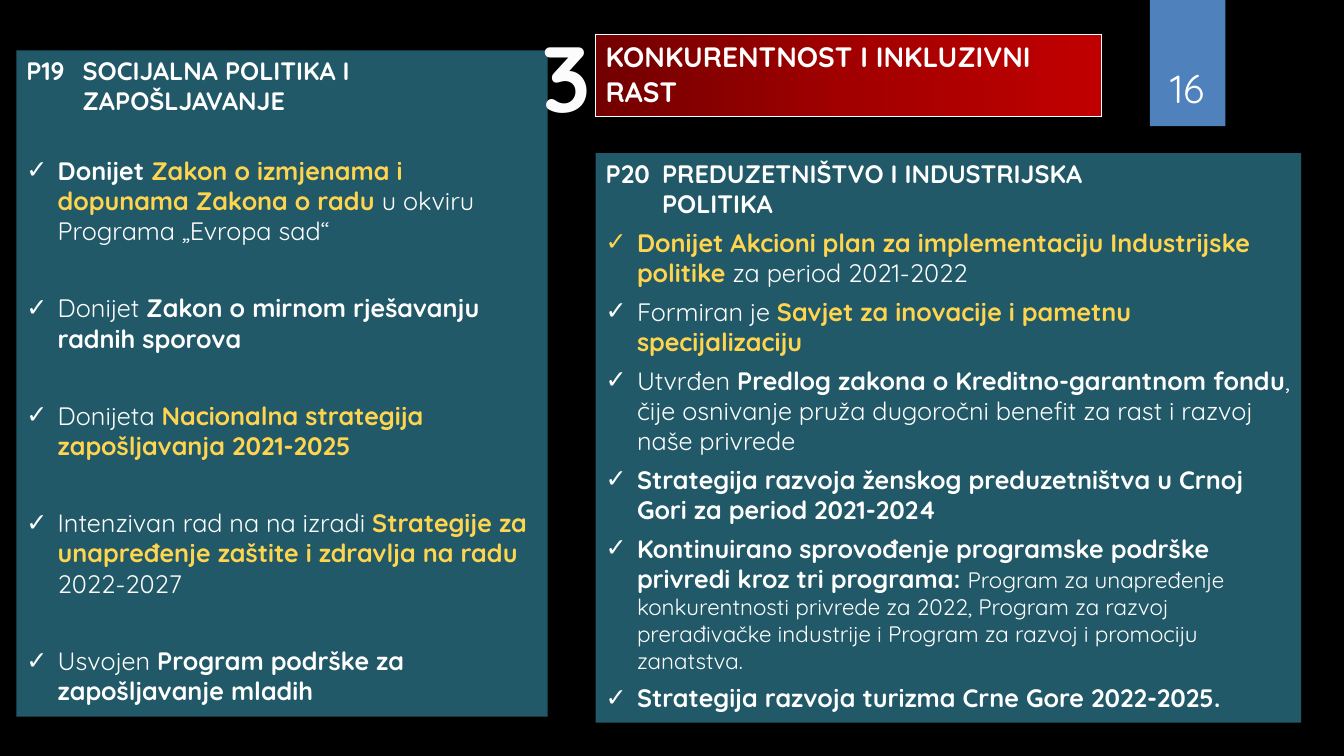
from copy import deepcopy

from pptx import Presentation
from pptx.dml.color import RGBColor
from pptx.enum.shapes import MSO_SHAPE
from pptx.enum.text import MSO_ANCHOR, MSO_AUTO_SIZE, PP_ALIGN
from pptx.oxml.ns import qn
from pptx.util import Cm, Pt

RECT = MSO_SHAPE.RECTANGLE
TOP, BOTTOM = MSO_ANCHOR.TOP, MSO_ANCHOR.BOTTOM
NO_FIT = MSO_AUTO_SIZE.NONE
CENTER = PP_ALIGN.CENTER
FONT = "Quicksand"
BLACK = RGBColor(0x00, 0x00, 0x00)
WHITE = RGBColor(0xFF, 0xFF, 0xFF)
OFF_WHITE = RGBColor(0xFC, 0xFC, 0xFD)
YELLOW = RGBColor(0xFF, 0xD5, 0x4F)
TEAL = RGBColor(0x21, 0x59, 0x68)
BLUE = RGBColor(0x4F, 0x81, 0xBD)
REDS = [(0, RGBColor(0x72, 0x00, 0x00)),
        (0.5, RGBColor(0xA2, 0x00, 0x00)),
        (1, RGBColor(0xC0, 0x00, 0x00))]


def add_run(p, text, size=18, color=WHITE, bold=False):
    r = p.add_run()
    r.text = text
    r.font.name = FONT
    r.font.size = Pt(size)
    r.font.bold = bold
    r.font.color.rgb = color
    return r


def format_paragraph(p, margin, indent, before, bullet=None):
    p.space_before = Pt(before)
    pPr = p._p.get_or_add_pPr()
    pPr.set("marL", str(Cm(margin)))
    pPr.set("indent", str(Cm(indent)))
    if bullet:
        pPr.append(pPr.makeelement(qn("a:buChar"), {"char": bullet}))
    else:
        pPr.append(pPr.makeelement(qn("a:buNone"), {}))


# Run styles: size, colour, bold
LIGHT = (18, WHITE, False)
SMALL = (16, WHITE, False)
STRONG = (18, WHITE, True)
GOLD = (18, YELLOW, True)

# Panels: box in cm, two heading lines, space before first and other items, items
PANELS = [
    ((15.01, 3.86, 17.78, 14.35),
     ("P20\tPREDUZETNIŠTVO I INDUSTRIJSKA", "POLITIKA"), 6, 6,
     [[("Donijet Akcioni plan za implementaciju Industrijske politike ", GOLD),
       ("za period 2021-2022", LIGHT)],
      [("Formiran je ", LIGHT),
       ("Savjet za inovacije i pametnu specijalizaciju", GOLD)],
      [("Utvrđen ", LIGHT),
       ("Predlog zakona o Kreditno-garantnom fondu", STRONG),
       (", čije osnivanje pruža dugoročni benefit za rast i razvoj naše privrede",
        LIGHT)],
      [("Strategija razvoja ženskog preduzetništva u Crnoj Gori "
        "za period 2021-2024", STRONG)],
      [("Kontinuirano sprovođenje programske podrške privredi "
        "kroz tri programa: ", STRONG),
       ("Program za unapređenje konkurentnosti privrede za 2022, Program za "
        "razvoj prerađivačke industrije i Program za razvoj i promociju "
        "zanatstva.", SMALL)],
      [("Strategija razvoja turizma Crne Gore 2022-2025.", STRONG)]]),
    ((0.41, 1.27, 13.39, 16.79),
     ("P19\tSOCIJALNA POLITIKA I", "ZAPOŠLJAVANJE"), 28, 33.5,
     [[("Donijet ", STRONG),
       ("Zakon o izmjenama i dopunama Zakona o radu ", GOLD),
       ("u okviru Programa „Evropa sad“", LIGHT)],
      [("Donijet ", LIGHT),
       ("Zakon o mirnom rješavanju radnih sporova", STRONG)],
      [("Donijeta ", LIGHT),
       ("Nacionalna strategija zapošljavanja 2021-2025", GOLD)],
      [("Intenzivan rad na na izradi ", LIGHT),
       ("Strategije za unapređenje zaštite i zdravlja na radu ", GOLD),
       ("2022-2027", LIGHT)],
      [("Usvojen ", LIGHT),
       ("Program podrške za zapošljavanje mladih", STRONG)]]),
]

prs = Presentation()
prs.slide_width, prs.slide_height = Cm(33.87), Cm(19.05)
s = prs.slides.add_slide(prs.slide_layouts[3])
s.background.fill.solid()
s.background.fill.fore_color.rgb = BLACK

# The heading sits in a table, so the title placeholder is not needed
title, *bodies = s.placeholders
title._element.getparent().remove(title._element)

# Slide number tab
tab = s.shapes.add_shape(RECT, Cm(28.98), 0, Cm(1.9), Cm(3.18))
tab.shadow.inherit = False
tab.fill.solid()
tab.fill.fore_color.rgb = BLUE
tab.line.fill.background()

# Slide number and section number
for text, box, size, color, bold, anchor in [
        ("16", (28.75, 0.81, 2.34, 2.13), 28, WHITE, False, BOTTOM),
        ("3", (13.36, 0.38, 1.85, 3.07), 66, OFF_WHITE, True, TOP)]:
    number = s.shapes.add_textbox(*map(Cm, box))
    tf = number.text_frame
    tf.word_wrap = text == "16"
    tf.vertical_anchor = anchor
    p = tf.paragraphs[0]
    p.alignment = CENTER
    add_run(p, text, size, color, bold)

# Policy panels
for sp, (box, heading, first_gap, gap, items) in zip(bodies, PANELS):
    sp.left, sp.top, sp.width, sp.height = map(Cm, box)
    sp.fill.solid()
    sp.fill.fore_color.rgb = TEAL
    tf = sp.text_frame
    tf.auto_size = NO_FIT
    tf.word_wrap = True
    tf.vertical_anchor = TOP
    p = tf.paragraphs[0]
    format_paragraph(p, 1.42, -1.42, 0)
    add_run(p, heading[0], *STRONG)
    p = tf.add_paragraph()
    format_paragraph(p, 1.42, 0, 0)
    add_run(p, heading[1], *STRONG)
    for i, item in enumerate(items):
        p = tf.add_paragraph()
        format_paragraph(p, 0.79, -0.79, gap if i else first_gap, "✓")
        for text, style in item:
            add_run(p, text, *style)

# Section heading with a red gradient
table = s.shapes.add_table(1, 1, Cm(15.01), Cm(0.86), Cm(12.75), Cm(2.08)).table
cell = table.cell(0, 0)
add_run(cell.text_frame.paragraphs[0], "KONKURENTNOST I INKLUZIVNI RAST", 20, WHITE, True)
cell.fill.gradient()
cell.fill.gradient_angle = 0
first_stop = cell._tc.tcPr.find(".//" + qn("a:gs"))
first_stop.addnext(deepcopy(first_stop))
for stop, (position, color) in zip(cell.fill.gradient_stops, REDS):
    stop.position = position
    stop.color.rgb = color

prs.save("out.pptx")
